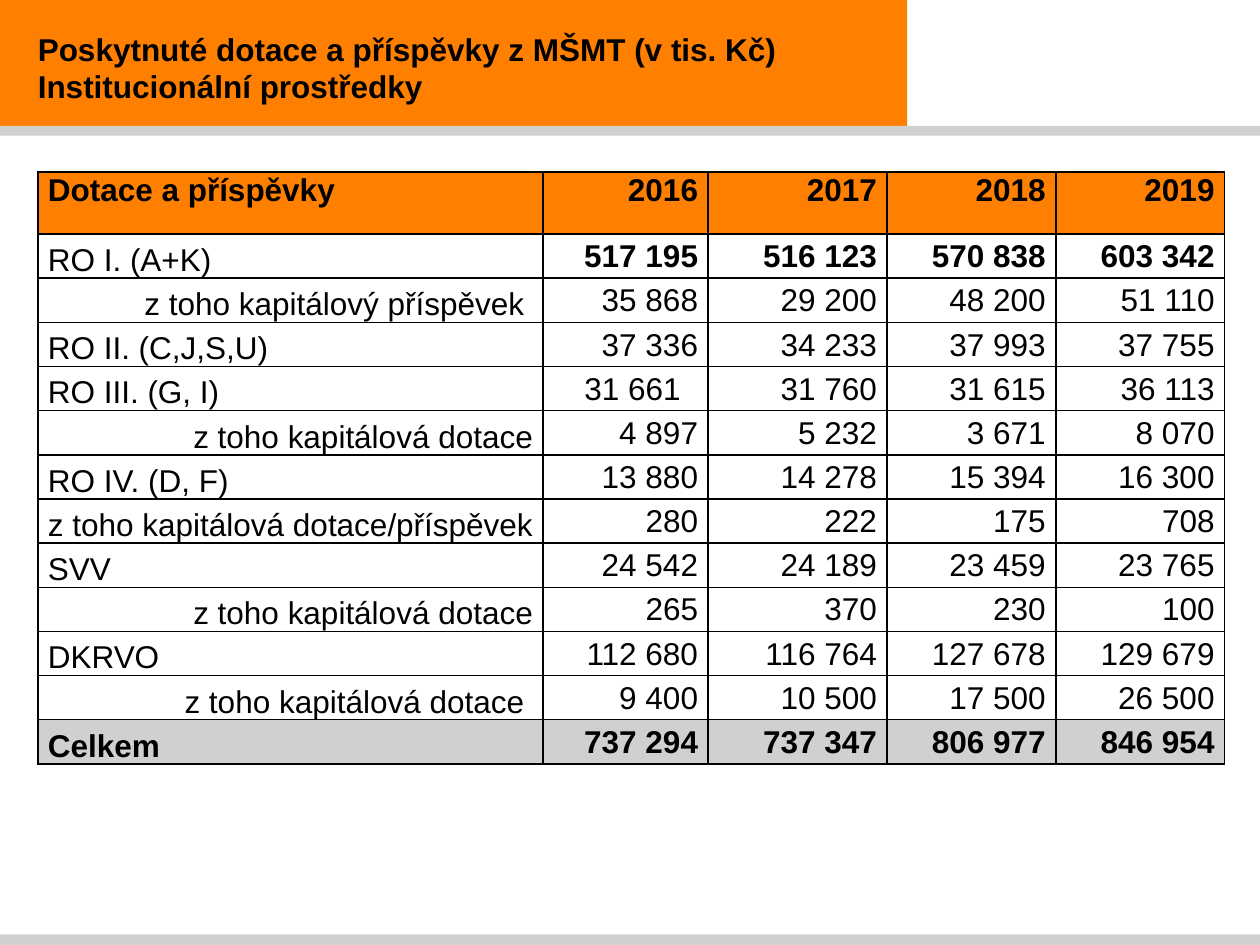
from dataclasses import dataclass

from lxml.etree import SubElement
from pptx import Presentation
from pptx.dml.color import RGBColor
from pptx.enum.shapes import MSO_SHAPE
from pptx.enum.text import MSO_ANCHOR, MSO_AUTO_SIZE, PP_ALIGN
from pptx.oxml.ns import qn
from pptx.util import Pt


@dataclass(frozen=True)
class Theme:
    orange: str = "FF8001"
    gray: str = "D0D0CE"
    ink: str = "000000"
    font: str = "Arial"
    text_size: int = 18
    border: int = 1
    inset: float = 5.76
    thin_inset: float = 0.72
    space_width: float = 5


THEME = Theme()
COLUMN_WIDTHS = [288.72, 94.32, 102.24, 96.48, 96.48]
HEADER_HEIGHT = 35.4
ROW_HEIGHT = 25.25

HEADER = ["Dotace a příspěvky", "2016", "2017", "2018", "2019"]
GRANTS = [
    ["RO I. (A+K)", "517 195", "516 123", "570 838", "603 342"],
    ["z toho kapitálový příspěvek", "35 868", "29 200", "48 200", "51 110"],
    ["RO II. (C,J,S,U)", "37 336", "34 233", "37 993", "37 755"],
    ["RO III. (G, I)", "31 661", "31 760", "31 615", "36 113"],
    ["z toho kapitálová dotace", "4 897", "5 232", "3 671", "8 070"],
    ["RO IV. (D, F)", "13 880", "14 278", "15 394", "16 300"],
    ["z toho kapitálová dotace/příspěvek", "280", "222", "175", "708"],
    ["SVV", "24 542", "24 189", "23 459", "23 765"],
    ["z toho kapitálová dotace", "265", "370", "230", "100"],
    ["DKRVO", "112 680", "116 764", "127 678", "129 679"],
    ["z toho kapitálová dotace", "9 400", "10 500", "17 500", "26 500"],
    ["Celkem", "737 294", "737 347", "806 977", "846 954"],
]
TOTAL_ROW = len(GRANTS)
BOLD_CELLS = {(1, column) for column in range(1, len(HEADER))}
RIGHT_SHIFTS = {(2, 0): 1, (4, 1): 2, (11, 0): 1}


def write_text(frame, text, align=PP_ALIGN.LEFT, bold=False):
    frame.text = text
    for paragraph in frame.paragraphs:
        paragraph.alignment = align
        font = paragraph.font
        font.name = THEME.font
        font.size = Pt(THEME.text_size)
        font.bold = bold
        font.color.rgb = RGBColor.from_string(THEME.ink)


def add_band(slide, left, top, width, height, color):
    band = slide.shapes.add_shape(
        MSO_SHAPE.RECTANGLE, Pt(left), Pt(top), Pt(width), Pt(height))
    band.shadow.inherit = False
    band.fill.solid()
    band.fill.fore_color.rgb = RGBColor.from_string(color)
    band.line.fill.background()


def place_title(slide, text):
    title = slide.shapes.title
    title.left, title.top, title.width, title.height = Pt(0), Pt(5), Pt(518.4), Pt(67)
    frame = title.text_frame
    frame.auto_size = MSO_AUTO_SIZE.NONE
    frame.word_wrap = True
    frame.vertical_anchor = MSO_ANCHOR.MIDDLE
    frame.margin_left = Pt(21.6)
    write_text(frame, text, bold=True)
    title.element.getparent().append(title.element)


def draw_borders(cell):
    properties = cell._tc.get_or_add_tcPr()
    for side in ("a:lnL", "a:lnR", "a:lnT", "a:lnB"):
        edge = SubElement(properties, qn(side), w=str(Pt(THEME.border)))
        SubElement(SubElement(edge, qn("a:solidFill")), qn("a:srgbClr"), val=THEME.ink)


def fill_cell(cell, color):
    if color:
        cell.fill.solid()
        cell.fill.fore_color.rgb = RGBColor.from_string(color)
    else:
        cell.fill.background()


def format_cell(cell, row, column, text):
    is_left = column == 0 and not text.startswith("z toho")
    is_strong = row in (0, TOTAL_ROW) or (row, column) in BOLD_CELLS
    shift = RIGHT_SHIFTS.get((row, column), 0) * THEME.space_width
    cell.margin_left = Pt(THEME.inset if is_left else THEME.thin_inset)
    cell.margin_right = Pt(THEME.thin_inset if is_left else THEME.inset + shift)
    cell.margin_top = Pt(THEME.thin_inset)
    cell.margin_bottom = Pt(0)
    if row == 0:
        cell.vertical_anchor = MSO_ANCHOR.TOP
    else:
        cell.vertical_anchor = MSO_ANCHOR.BOTTOM if column == 0 else MSO_ANCHOR.MIDDLE
    draw_borders(cell)
    fill_cell(cell, {0: THEME.orange, TOTAL_ROW: THEME.gray}.get(row))
    write_text(cell.text_frame, text, bold=is_strong,
               align=PP_ALIGN.LEFT if is_left else PP_ALIGN.RIGHT)


def add_grants_table(slide):
    content = [HEADER, *GRANTS]
    heights = [HEADER_HEIGHT] + [ROW_HEIGHT] * len(GRANTS)
    grants = slide.shapes.add_table(
        len(content), len(HEADER), Pt(21.6), Pt(98.4),
        Pt(sum(COLUMN_WIDTHS)), Pt(sum(heights))).table
    grants.first_row = False
    grants.horz_banding = False
    for column, width in zip(grants.columns, COLUMN_WIDTHS):
        column.width = Pt(width)
    for row, height in zip(grants.rows, heights):
        row.height = Pt(height)
    for row, values in enumerate(content):
        for column, text in enumerate(values):
            format_cell(grants.cell(row, column), row, column, text)


def main():
    presentation = Presentation()
    presentation.slide_width, presentation.slide_height = Pt(720), Pt(540)
    slide = presentation.slides.add_slide(presentation.slide_layouts[5])
    add_band(slide, 0, 0, 518.4, 72, THEME.orange)
    add_band(slide, 0, 534, 720, 6, THEME.gray)
    add_band(slide, 0, 72, 720, 5.5, THEME.gray)
    add_grants_table(slide)
    place_title(slide, "Poskytnuté dotace a příspěvky z MŠMT (v tis. Kč)\n"
                       "Institucionální prostředky")
    presentation.save("out.pptx")


if __name__ == "__main__":
    main()
